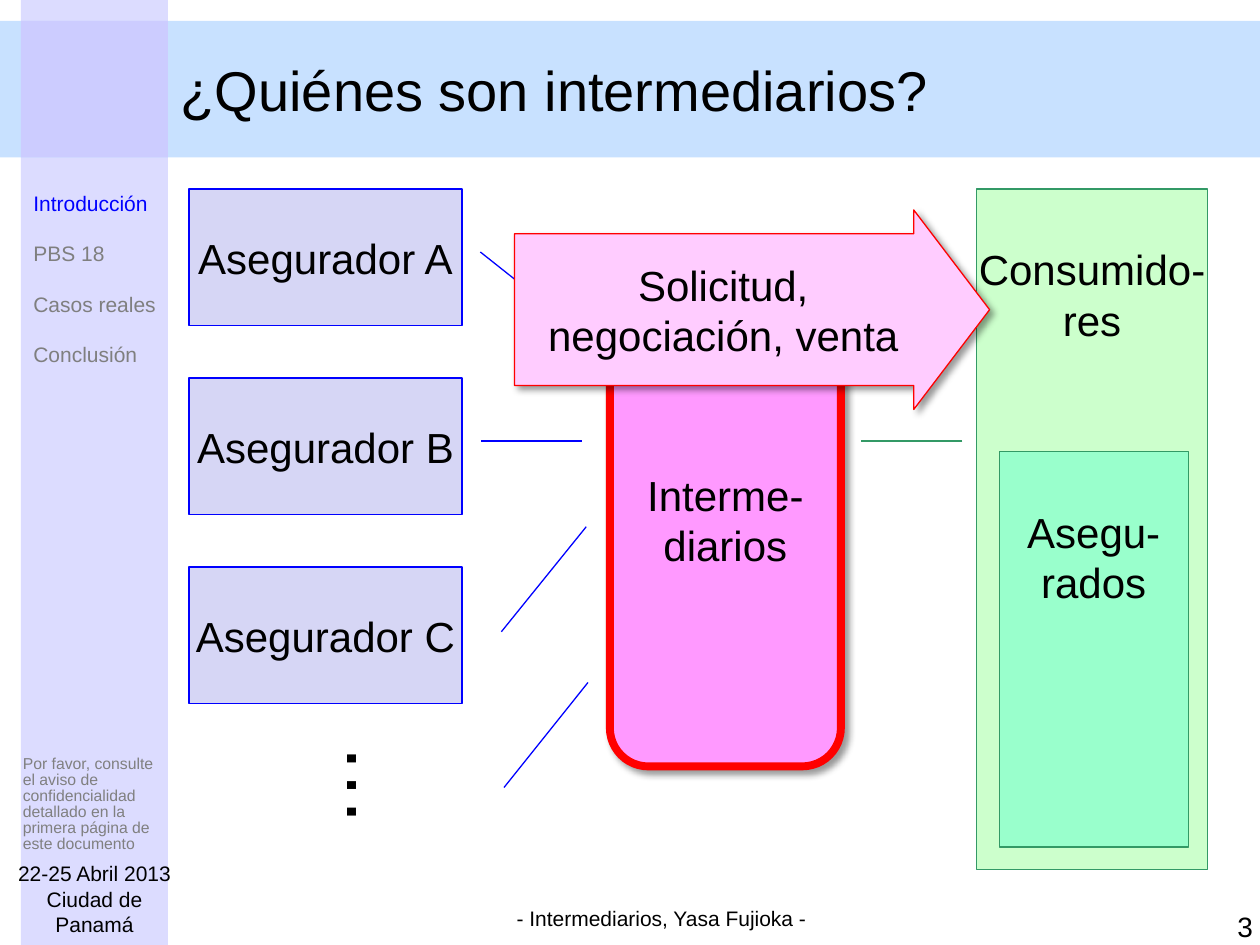
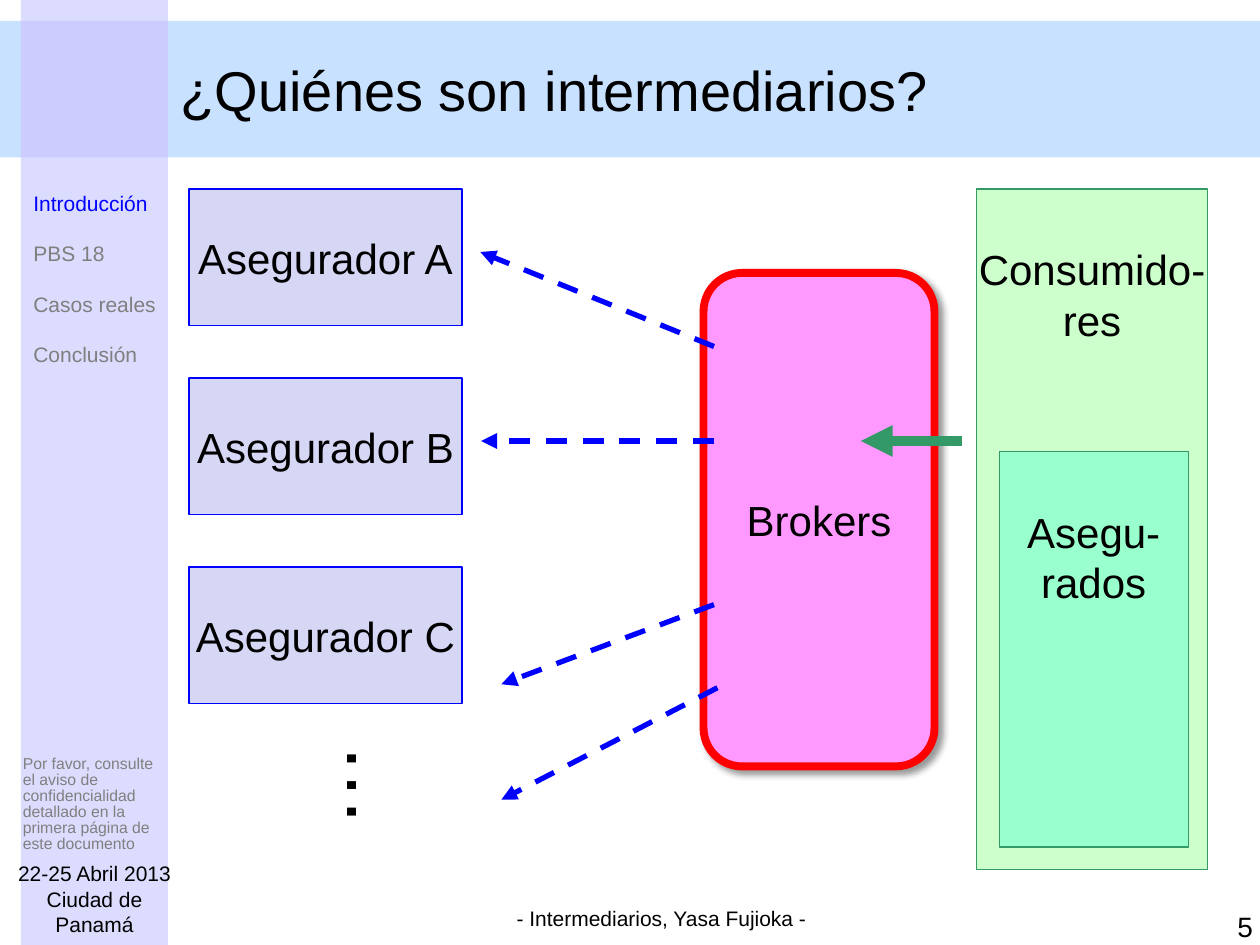
from lxml.etree import SubElement
from pptx import Presentation
from pptx.dml.color import RGBColor
from pptx.enum.dml import MSO_LINE
from pptx.enum.shapes import MSO_CONNECTOR, MSO_SHAPE as SHAPE
from pptx.enum.text import MSO_ANCHOR as ANCHOR, MSO_AUTO_SIZE as AUTO, PP_ALIGN as ALIGN
from pptx.oxml.ns import qn
from pptx.util import Pt

FONT = "Arial"
BLACK = RGBColor(0x00, 0x00, 0x00)
BLUE = RGBColor(0x00, 0x00, 0xFF)
RED = RGBColor(0xFF, 0x00, 0x00)
GREEN = RGBColor(0x33, 0x99, 0x66)
MENU_GREY = RGBColor(0x7F, 0x7F, 0x7F)
NOTE_GREY = RGBColor(0x80, 0x80, 0x80)
SIDEBAR = RGBColor(0xDC, 0xDC, 0xFF)
BAND = RGBColor(0xC8, 0xE1, 0xFF)
CROSSING = RGBColor(0xCC, 0xCC, 0xFF)
INSURER = RGBColor(0xD6, 0xD6, 0xF5)
CONSUMER = RGBColor(0xCC, 0xFF, 0xCC)
INSURED = RGBColor(0x99, 0xFF, 0xCC)
MIDDLEMAN = RGBColor(0xFF, 0x99, 0xFF)
SALE = RGBColor(0xFF, 0xCC, 0xFF)

WIDTH, HEIGHT = 720, 540
BAND_TOP, BAND_H = 12, 78
SIDE_X, SIDE_W = 12, 84
TITLE = "¿Quiénes son intermediarios?"
MENU = ["Introducción", "PBS 18", "Casos reales", "Conclusión"]
NOTE = ("Por favor, consulte el aviso de confidencialidad detallado "
        "en la primera página de este documento")


def write(sp, *lines, size=24, colors=(BLACK,), align=ALIGN.CENTER, anchor=ANCHOR.TOP,
          insets=(7.2, 3.6, 7.2, 3.6), spacing=None, wrap=True):
    """Fill a shape with paragraphs; the last colour serves the remaining lines."""
    tf = sp.text_frame
    tf.word_wrap, tf.vertical_anchor, tf.auto_size = wrap, anchor, AUTO.NONE
    tf.margin_left, tf.margin_top, tf.margin_right, tf.margin_bottom = map(Pt, insets)
    for i, line in enumerate(lines):
        p = tf.paragraphs[0] if i == 0 else tf.add_paragraph()
        p.alignment = align
        if spacing:
            p.line_spacing = spacing
        r = p.add_run()
        r.text = line
        r.font.name, r.font.size = FONT, Pt(size)
        r.font.color.rgb = colors[min(i, len(colors) - 1)]


def add_box(s, box, fill, line=None, width=0.75, kind=SHAPE.RECTANGLE):
    sp = s.shapes.add_shape(kind, *map(Pt, box))
    sp.shadow.inherit = False
    sp.fill.solid()
    sp.fill.fore_color.rgb = fill
    if line is None:
        sp.line.fill.background()
    else:
        sp.line.color.rgb, sp.line.width = line, Pt(width)
    return sp


def add_text(s, box, *lines, **fmt):
    sp = s.shapes.add_textbox(*map(Pt, box))
    write(sp, *lines, **fmt)
    return sp


def cast_shadow(sp):
    effects = sp.element.spPr.find(qn("a:effectLst"))
    shadow = SubElement(effects, qn("a:outerShdw"), blurRad=str(Pt(4)), dist=str(Pt(3)),
                        dir="2700000", algn="tl", rotWithShape="0")
    color = SubElement(shadow, qn("a:srgbClr"), val=str(BLACK))
    SubElement(color, qn("a:alpha"), val="40000")


def add_line(s, start, end, color=BLUE, width=0.75, dash=False, arrow=False):
    cxn = s.shapes.add_connector(MSO_CONNECTOR.STRAIGHT, *map(Pt, (*start, *end)))
    cxn.line.color.rgb, cxn.line.width = color, Pt(width)
    if dash:
        cxn.line.dash_style = MSO_LINE.DASH
    spPr = cxn.element.spPr
    if arrow:
        SubElement(spPr.find(qn("a:ln")), qn("a:tailEnd"), type="triangle")
    SubElement(spPr, qn("a:effectLst"))


def add_sidebar(s, x, w):
    add_text(s, (x, 91, w, 124), *MENU, size=12, colors=(BLUE, MENU_GREY),
             align=ALIGN.LEFT, spacing=2.0, insets=(7.2, 3.6, 2.9, 3.6))
    add_text(s, (x + 1, 428.5, w, 62.5), NOTE, size=9, colors=(NOTE_GREY,),
             align=ALIGN.LEFT, anchor=ANCHOR.MIDDLE, spacing=0.85, insets=(0, 3.6, 0, 3.6))
    add_text(s, (x - 6, 492, w + 12, 44), "22-25 Abril 2013", "Ciudad de Panamá",
             size=12, insets=(0, 0, 0, 0))


def add_frame(prs, number):
    """Start a slide with its bands, title, sidebar and footers."""
    s = prs.slides.add_slide(prs.slide_layouts[5])
    add_box(s, (SIDE_X, 0, SIDE_W, HEIGHT), SIDEBAR)
    add_box(s, (0, BAND_TOP, WIDTH, BAND_H), BAND)
    add_box(s, (SIDE_X, BAND_TOP, SIDE_W, BAND_H), CROSSING)
    title = s.shapes.title
    title.left, title.top, title.width, title.height = map(Pt, (96, BAND_TOP, 612, BAND_H))
    write(title, TITLE, size=32, align=ALIGN.LEFT, anchor=ANCHOR.MIDDLE)
    title.element.getparent().append(title.element)  # bring in front of the bands
    add_sidebar(s, SIDE_X, SIDE_W)
    add_text(s, (186, 514, 384, 22), "- Intermediarios, Yasa Fujioka -", size=12)
    add_text(s, (686, 520, 30, 19), str(number), size=16, align=ALIGN.RIGHT,
             insets=(0, 0, 0, 0))
    return s


def add_insurers(s, x, y, w, h, pitch):
    for i, letter in enumerate("ABC"):
        sp = add_box(s, (x, y + i * pitch, w, h), INSURER, BLUE)
        write(sp, f"Asegurador {letter}", anchor=ANCHOR.MIDDLE, wrap=False)
    dots = add_text(s, (x + 69, y + 310, 73, h), "…", size=48)
    dots.element.txBody.bodyPr.set("vert", "eaVert")


def add_consumers(s, x, y, w, h):
    below_first_line = (7.2, 31.2, 7.2, 3.6)
    sp = add_box(s, (x, y, w, h), CONSUMER, GREEN)
    write(sp, "Consumido-", "res", insets=below_first_line, wrap=False)
    sp = add_box(s, (x + 13, y + 150, w - 24, h - 163), INSURED, GREEN)
    write(sp, "Asegu-rados", insets=below_first_line)


def add_middleman(s, x, text):
    sp = add_box(s, (x, 156, 132, 282), MIDDLEMAN, RED, 4.5, SHAPE.ROUNDED_RECTANGLE)
    cast_shadow(sp)
    write(sp, text, anchor=ANCHOR.MIDDLE)


def add_sale_arrow(s, box):
    sp = add_box(s, box, SALE, RED, kind=SHAPE.RIGHT_ARROW)
    sp.adjustments[0], sp.adjustments[1] = 0.76, 0.38
    cast_shadow(sp)
    write(sp, "Solicitud, negociación, venta", anchor=ANCHOR.MIDDLE)


def market_slide(prs, number, middleman_x, middleman, links, link_style, demand_style):
    """Show insurers and consumers joined through a middleman."""
    s = add_frame(prs, number)
    add_insurers(s, 108, 108, 156, 78, pitch=108)
    add_consumers(s, 558, 108, 132, 389)
    add_middleman(s, middleman_x, middleman)
    for start, end in links:
        add_line(s, start, end, **link_style)
    add_line(s, (550, 252), (492, 252), GREEN, **demand_style)
    return s


def main():
    prs = Presentation()
    prs.slide_width, prs.slide_height = Pt(WIDTH), Pt(HEIGHT)

    plain_links = [((335, 192), (274.5, 144)), ((332.5, 252), (275, 252)),
                   ((335, 301), (286.5, 361)), ((336, 390), (288, 450))]
    s = market_slide(prs, 3, 348.5, "Interme- diarios", plain_links, {}, {})
    add_sale_arrow(s, (294, 120, 271.5, 114))

    broker_links = [((408, 198), (274.5, 144)), ((408, 252), (275, 252)),
                    ((408, 345.5), (286.5, 391)), ((410, 393), (286.5, 457))]
    market_slide(prs, 5, 402, "Brokers", broker_links,
                 {"width": 3, "dash": True, "arrow": True}, {"width": 6, "arrow": True})
    prs.save("out.pptx")


if __name__ == "__main__":
    main()
